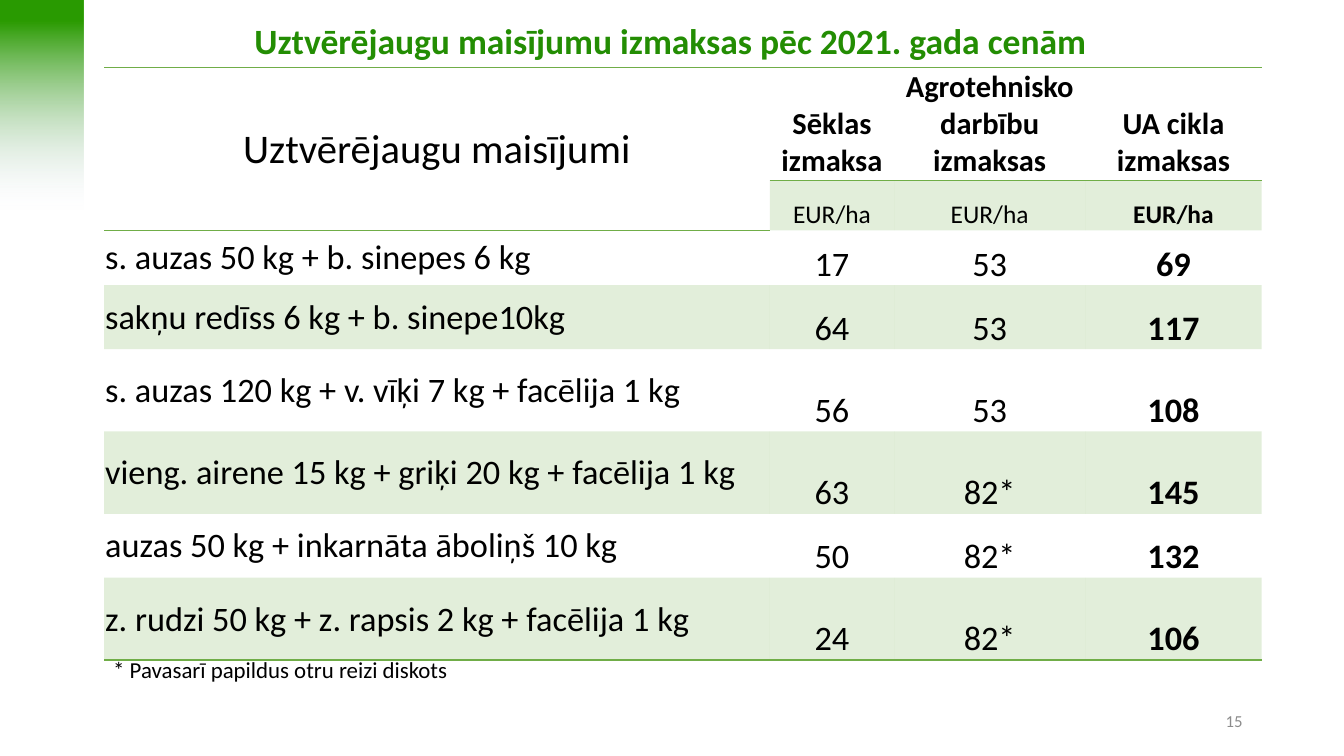
from dataclasses import dataclass

from lxml import etree
from pptx import Presentation
from pptx.dml.color import RGBColor
from pptx.enum.shapes import MSO_SHAPE
from pptx.enum.text import MSO_ANCHOR, PP_ALIGN
from pptx.oxml.ns import qn
from pptx.util import Inches, Pt

RECTANGLE = MSO_SHAPE.RECTANGLE
TOP, MIDDLE, BOTTOM = MSO_ANCHOR.TOP, MSO_ANCHOR.MIDDLE, MSO_ANCHOR.BOTTOM
LEFT, CENTER, RIGHT = PP_ALIGN.LEFT, PP_ALIGN.CENTER, PP_ALIGN.RIGHT
PLAIN_TABLE_STYLE = "{2D5ABB26-0587-4C30-8999-92F81FD0307C}"

TITLE = "Uztvērējaugu maisījumu izmaksas pēc 2021. gada cenām"
HEADINGS = ("Uztvērējaugu maisījumi", "Sēklas izmaksa",
            "Agrotehnisko darbību izmaksas", "UA cikla izmaksas")
UNITS = ("", "EUR/ha", "EUR/ha", "EUR/ha")
MIXTURES = [
    ("s. auzas 50 kg + b. sinepes 6 kg", "17", "53", "69"),
    ("sakņu redīss 6 kg + b. sinepe10kg", "64", "53", "117"),
    ("s. auzas 120 kg + v. vīķi 7 kg + facēlija 1 kg", "56", "53", "108"),
    ("vieng. airene 15 kg + griķi 20 kg + facēlija 1 kg", "63", "82*", "145"),
    ("auzas 50 kg + inkarnāta āboliņš 10 kg", "50", "82*", "132"),
    ("z. rudzi 50 kg + z. rapsis 2 kg + facēlija 1 kg", "24", "82*", "106"),
]
FOOTNOTE = "* Pavasarī papildus otru reizi diskots"
PAGE_NUMBER = "15"

PAGE_SIZE = (14.7, 8.27)
BAND_BOX = (0, 0, 0.91, 2.29)
TITLE_BOX = (1.99, 0.16, 10.68, 0.57)
FOOTNOTE_BOX = (1.14, 7.12, 3.9, 0.4)
NUMBER_BOX = (10.38, 7.66, 3.31, 0.44)
TABLE_CORNER = (1.14, 0.74)
COLUMNS = (7.28, 1.36, 2.09, 1.93)
ROWS = (1.23, 0.55, 0.6, 0.7, 0.9, 0.9, 0.7, 0.9)


@dataclass(frozen=True)
class Theme:
    font: str = "Calibri"
    title: str = "238D03"
    text: str = "000000"
    muted: str = "8C8C8C"
    accent: str = "70AD47"
    band_start: str = "2A9B00"
    band_end: str = "E0E5F7"
    tint: int = 20
    title_size: float = 28
    corner_size: float = 32
    heading_size: float = 24
    unit_size: float = 20
    body_size: float = 27
    note_size: float = 18
    number_size: float = 13.2


THEME = Theme()


def inches(values):
    return [Inches(value) for value in values]


def write(frame, text, size, color=THEME.text, bold=False, align=LEFT):
    frame.text = text
    para = frame.paragraphs[0]
    para.alignment = align
    for span in para.runs:
        span.font.name = THEME.font
        span.font.size = Pt(size)
        span.font.bold = bold
        span.font.color.rgb = RGBColor.from_string(color)


def set_alpha(color_element, percent):
    etree.SubElement(color_element, qn("a:alpha"), val=str(percent * 1000))


def add_band(page):
    band = page.shapes.add_shape(RECTANGLE, *inches(BAND_BOX))
    band.shadow.inherit = False
    band.line.fill.background()
    band.fill.gradient()
    band.fill.gradient_angle = 270
    stops = band.fill.gradient_stops
    for stop, place, color in zip(stops, (0.1, 1), (THEME.band_start, THEME.band_end)):
        stop.position = place
        stop.color.rgb = RGBColor.from_string(color)
    set_alpha(list(band.element.iter(qn("a:srgbClr")))[-1], 0)


def add_label(page, area, text, size, color, align, anchor, wrap):
    frame = page.shapes.add_textbox(*inches(area)).text_frame
    frame.word_wrap = wrap
    frame.vertical_anchor = anchor
    write(frame, text, size, color, align=align)


def rule_cell(properties, sides):
    for position, side in enumerate(sides):
        line = etree.Element(qn(f"a:{side}"), w=str(Pt(1)))
        fill = etree.SubElement(line, qn("a:solidFill"))
        etree.SubElement(fill, qn("a:srgbClr"), val=THEME.accent)
        properties.insert(position, line)


def cell_style(row, column):
    last = column == len(COLUMNS) - 1
    if row == 0:
        return (THEME.heading_size, True) if column else (THEME.corner_size, False)
    return (THEME.unit_size if row == 1 else THEME.body_size), last


def cell_rules(row, column):
    if row == 0:
        return ["lnT", "lnB"]
    if row == len(ROWS) - 1 or (row, column) == (1, 0):
        return ["lnB"]
    return []


def style_cell(cell, row, column, text):
    cell.margin_left = cell.margin_right = cell.margin_top = Inches(0.01)
    cell.margin_bottom = 0
    cell.vertical_anchor = BOTTOM if column else MIDDLE
    properties = cell._tc.get_or_add_tcPr()
    if row % 2 and (row, column) != (1, 0):
        cell.fill.solid()
        cell.fill.fore_color.rgb = RGBColor.from_string(THEME.accent)
        set_alpha(next(properties.iter(qn("a:srgbClr"))), THEME.tint)
    else:
        cell.fill.background()
    rule_cell(properties, cell_rules(row, column))
    if text:
        size, bold = cell_style(row, column)
        align = CENTER if column or row == 0 else LEFT
        write(cell.text_frame, text, size, bold=bold, align=align)


def add_cost_table(page):
    area = (*TABLE_CORNER, sum(COLUMNS), sum(ROWS))
    frame = page.shapes.add_table(len(ROWS), len(COLUMNS), *inches(area))
    table = frame.table
    table.first_row = table.horz_banding = False
    next(frame.element.iter(qn("a:tableStyleId"))).text = PLAIN_TABLE_STYLE
    for column, width in zip(table.columns, inches(COLUMNS)):
        column.width = width
    for row, height in zip(table.rows, inches(ROWS)):
        row.height = height
    table.cell(0, 0).merge(table.cell(1, 0))
    for row, texts in enumerate([HEADINGS, UNITS, *MIXTURES]):
        for column, text in enumerate(texts):
            style_cell(table.cell(row, column), row, column, text)


def main():
    deck = Presentation()
    deck.slide_width, deck.slide_height = inches(PAGE_SIZE)
    page = deck.slides.add_slide(deck.slide_layouts[5])
    add_band(page)
    add_label(page, NUMBER_BOX, PAGE_NUMBER, THEME.number_size, THEME.muted,
              RIGHT, MIDDLE, True)
    add_cost_table(page)
    title = page.shapes.title
    title.left, title.top, title.width, title.height = inches(TITLE_BOX)
    title.text_frame.vertical_anchor = TOP
    write(title.text_frame, TITLE, THEME.title_size, THEME.title, True, CENTER)
    add_label(page, FOOTNOTE_BOX, FOOTNOTE, THEME.note_size, THEME.text,
              LEFT, TOP, False)
    deck.save("out.pptx")


if __name__ == "__main__":
    main()
